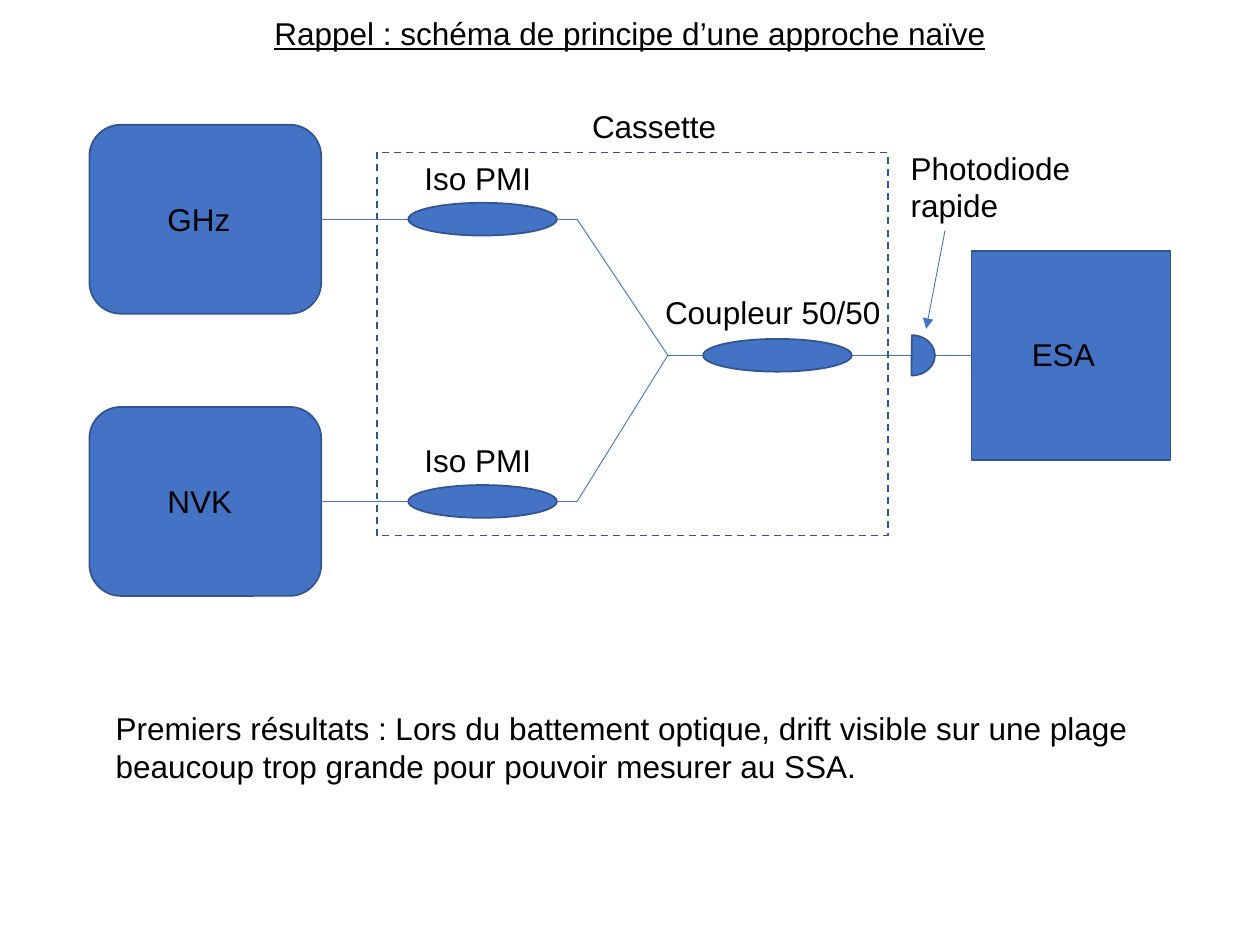
from dataclasses import dataclass

from lxml.etree import SubElement
from pptx import Presentation
from pptx.dml.color import RGBColor
from pptx.enum.dml import MSO_LINE
from pptx.enum.shapes import MSO_CONNECTOR, MSO_SHAPE as SHAPE
from pptx.enum.text import MSO_AUTO_SIZE, PP_ALIGN
from pptx.oxml.ns import qn
from pptx.util import Inches, Pt


@dataclass(frozen=True)
class Theme:
    font: str = "Arial"
    text_size: Pt = Pt(18)
    text: RGBColor = RGBColor(0, 0, 0)
    fill: RGBColor = RGBColor(0x44, 0x72, 0xC4)
    outline: RGBColor = RGBColor(0x32, 0x54, 0x91)
    outline_width: Pt = Pt(1)
    fibre_width: Pt = Pt(0.5)


theme = Theme()
presentation = Presentation()
presentation.slide_width, presentation.slide_height = Inches(10), Inches(7.5)
slide = presentation.slides.add_slide(presentation.slide_layouts[6])

# Grid of 100 columns by 75 rows; every length below is in grid units
UNIT = presentation.slide_width / 100


def add_label(text, left, top, width, height=4, align=PP_ALIGN.LEFT, underline=None):
    box = [round(value * UNIT) for value in (left, top, width, height)]
    frame = slide.shapes.add_textbox(*box).text_frame
    frame.word_wrap = True
    frame.auto_size = MSO_AUTO_SIZE.SHAPE_TO_FIT_TEXT
    frame.text = text
    paragraph = frame.paragraphs[0]
    paragraph.alignment = align
    font = paragraph.runs[0].font
    font.name, font.size, font.underline = theme.font, theme.text_size, underline
    font.color.rgb = theme.text


def add_fibre(*points):
    ends = [round(value * UNIT) for point in points for value in point]
    connector = slide.shapes.add_connector(MSO_CONNECTOR.STRAIGHT, *ends)
    connector.line.color.rgb = theme.fill
    connector.line.width = theme.fibre_width
    SubElement(connector._element.spPr, qn("a:effectLst"))
    return connector


add_label("Rappel : schéma de principe d’une approche naïve", 13.8, 0.6, 72.4,
          align=PP_ALIGN.CENTER, underline=True)
add_label("Premiers résultats : Lors du battement optique, drift visible sur une plage "
          "beaucoup trop grande pour pouvoir mesurer au SSA.", 8.2, 55.8, 83.6, 7.1)

# Optical axes: one row per laser, and the row of the coupler between them
laser_rows = {"GHz": 17.4, "NVK": 39.8}
coupler_row = 28.2
laser_left, laser_width, laser_height = 7.1, 18.4, 15
isolator_left, coupler_left, oval_width, oval_height = 32.4, 55.8, 11.8, 2.6
bend_column, junction_column = 45.8, 53
analyser_left, analyser_width, analyser_height = 77.1, 15.8, 16.6

components = {
    "coupler": (SHAPE.OVAL, coupler_left, coupler_row, oval_width, oval_height),
    "analyser": (SHAPE.RECTANGLE, analyser_left, coupler_row, analyser_width, analyser_height),
    "cassette": (SHAPE.RECTANGLE, 29.9, 27.3, 40.6, 30.4),
}
for laser, row in laser_rows.items():
    components[laser] = (SHAPE.ROUNDED_RECTANGLE, laser_left, row, laser_width, laser_height)
    components[laser + " isolator"] = (SHAPE.OVAL, isolator_left, row, oval_width, oval_height)

# Fibre into the analyser lies under the photodiode
detector_fibre = add_fibre((coupler_left + oval_width, coupler_row), (analyser_left, coupler_row))
components["photodiode"] = (SHAPE.PIE, 70.5, coupler_row, 3.7, 3.2)

shapes = {}
for name, (kind, left, row, width, height) in components.items():
    box = [round(value * UNIT) for value in (left, row - height / 2, width, height)]
    shape = shapes[name] = slide.shapes.add_shape(kind, *box)
    shape.shadow.inherit = False
    shape.fill.solid()
    shape.fill.fore_color.rgb = theme.fill
    shape.line.color.rgb = theme.outline
    shape.line.width = theme.outline_width

shapes["cassette"].fill.background()
shapes["cassette"].line.dash_style = MSO_LINE.DASH
photodiode = shapes["photodiode"]
photodiode.rotation = 180
photodiode.adjustments[0], photodiode.adjustments[1] = 54.48, 162  # half disc
detector_fibre.end_connect(shapes["analyser"], 1)

junction = (junction_column, coupler_row)
add_fibre(junction, (coupler_left, coupler_row))
for laser, row in laser_rows.items():
    laser_fibre = add_fibre((laser_left + laser_width, row), (isolator_left, row))
    laser_fibre.begin_connect(shapes[laser], 3)
    add_fibre((isolator_left + oval_width, row), (bend_column, row))
    add_fibre((bend_column, row), junction)
    add_label(laser, 12.3, row - 2, 8.2)
    add_label("Iso PMI", 32.7, row - 5.3, 11.6)

add_label("ESA", 80.9, 26.1, 8.2)
add_label("Coupleur 50/50", 51.8, 22.8, 19.3)
add_label("Cassette", 46, 8, 12.8)
add_label("Photodiode rapide", 71.3, 11.3, 16, 7.1)

pointer = add_fibre((75, 18.3), (73.5, 26.1))
SubElement(pointer.line._get_or_add_ln(), qn("a:tailEnd"), type="triangle")

presentation.save("out.pptx")
